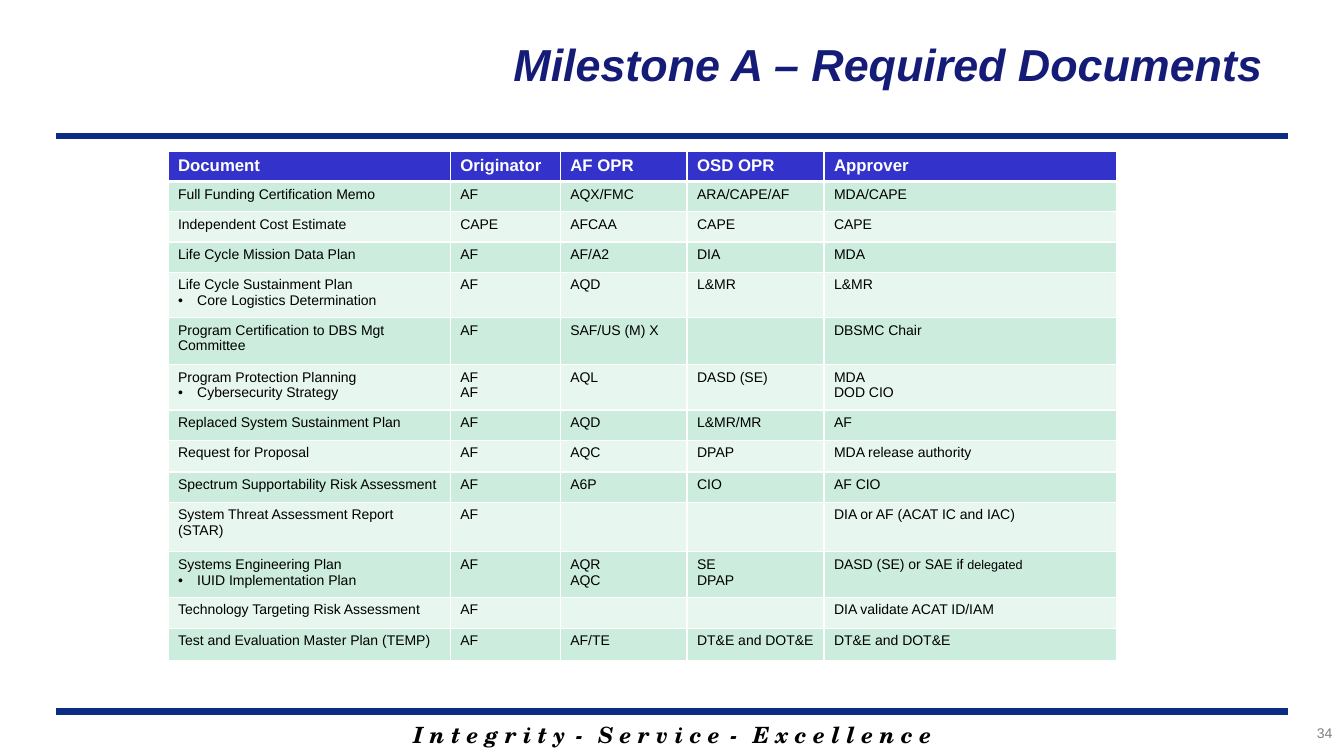
from dataclasses import dataclass

from lxml.etree import SubElement
from pptx import Presentation
from pptx.dml.color import RGBColor
from pptx.enum.shapes import MSO_CONNECTOR as Connector
from pptx.enum.text import MSO_ANCHOR as Anchor, PP_ALIGN as Align
from pptx.oxml.ns import qn
from pptx.util import Inches, Pt

SLIDE_WIDTH, SLIDE_HEIGHT = Inches(13.33), Inches(7.5)
GRID_COLUMNS, GRID_ROWS = 160, 90
WHITE, BLACK, RULE_BLUE = "FFFFFF", "000000", "0C2D83"
HEADER_FILL, BAND_FILLS = "3333CC", ("E7F6EF", "CCECDE")
HEADER_SIZE, BODY_SIZE, SMALL_SIZE = 12, 10, 9
BULLET, SMALL_WORD = "• ", "delegated"
BULLET_INDENT = Inches(0.19)
COLUMN_WIDTHS = (33.6, 13.1, 15.1, 16.3, 34.8)


@dataclass
class Style:
    size: float
    color: str
    font: str = "Arial"
    bold: bool = False
    italic: bool = False


@dataclass
class Run:
    text: str
    spacing: int = 0


@dataclass
class TextBox:
    left: float
    top: float
    width: float
    height: float
    runs: tuple[Run, ...]
    style: Style
    align: Align
    anchor: Anchor = Anchor.TOP


@dataclass
class TableRow:
    """Row height in grid rows; a line break in a cell starts a new paragraph."""
    height: float
    cells: tuple[str, str, str, str, str]


WORD_GAP = Run(" - ", 300)
TEXT_BOXES = (
    TextBox(22.7, 85.2, 114.7, 4.4,
            (Run("I n t e g r i t y"), WORD_GAP, Run("S e r v i c e"), WORD_GAP,
             Run("E x c e l l e n c e")),
            Style(16, BLACK, "TeX Gyre Schola", True, True), Align.CENTER),
    TextBox(58.9, 2, 93.7, 11.2, (Run("Milestone A – Required Documents"),),
            Style(32, "151C77", bold=True, italic=True), Align.CENTER, Anchor.MIDDLE),
    TextBox(139.8, 85.7, 20, 4, (Run("34"),), Style(10, "7F7F7F"), Align.RIGHT),
)
RULE_ROWS = (84.7, 16.2)

TABLE_ROWS = (
    TableRow(3, ("Document", "Originator", "AF OPR", "OSD OPR", "Approver")),
    TableRow(3.6, ("Full Funding Certification Memo", "AF", "AQX/FMC", "ARA/CAPE/AF", "MDA/CAPE")),
    TableRow(3.6, ("Independent Cost Estimate", "CAPE", "AFCAA", "CAPE", "CAPE")),
    TableRow(3.6, ("Life Cycle Mission Data Plan", "AF", "AF/A2", "DIA", "MDA")),
    TableRow(5.4, ("Life Cycle Sustainment Plan\n• Core Logistics Determination",
                   "AF", "AQD", "L&MR", "L&MR")),
    TableRow(5.6, ("Program Certification to DBS Mgt Committee",
                   "AF", "SAF/US (M) X", "", "DBSMC Chair")),
    TableRow(5.4, ("Program Protection Planning\n• Cybersecurity Strategy",
                   "AF\nAF", "AQL", "DASD (SE)", "MDA\nDOD CIO")),
    TableRow(3.6, ("Replaced System Sustainment Plan", "AF", "AQD", "L&MR/MR", "AF")),
    TableRow(3.8, ("Request for Proposal", "AF", "AQC", "DPAP", "MDA release authority")),
    TableRow(3.6, ("Spectrum Supportability Risk Assessment", "AF", "A6P", "CIO", "AF CIO")),
    TableRow(5.9, ("System Threat Assessment Report (STAR)",
                   "AF", "", "", "DIA or AF (ACAT IC and IAC)")),
    TableRow(5.4, ("Systems Engineering Plan\n• IUID Implementation Plan",
                   "AF", "AQR\nAQC", "SE\nDPAP", "DASD (SE) or SAE if delegated")),
    TableRow(3.7, ("Technology Targeting Risk Assessment", "AF", "", "", "DIA validate ACAT ID/IAM")),
    TableRow(3.8, ("Test and Evaluation Master Plan (TEMP)",
                   "AF", "AF/TE", "DT&E and DOT&E", "DT&E and DOT&E")),
)


def across(columns: float) -> int:
    return round(SLIDE_WIDTH * columns / GRID_COLUMNS)


def down(rows: float) -> int:
    return round(SLIDE_HEIGHT * rows / GRID_ROWS)


def rgb(color: str) -> RGBColor:
    return RGBColor.from_string(color)


def add_run(paragraph, run: Run, style: Style) -> None:
    text_run = paragraph.add_run()
    text_run.text = run.text
    font = text_run.font
    font.name, font.size = style.font, Pt(style.size)
    font.bold, font.italic = style.bold, style.italic
    font.color.rgb = rgb(style.color)
    if run.spacing:
        text_run._r.get_or_add_rPr().set("spc", str(run.spacing))


def add_text_box(slide, box: TextBox) -> None:
    shape = slide.shapes.add_textbox(across(box.left), down(box.top),
                                     across(box.width), down(box.height))
    frame = shape.text_frame
    frame.word_wrap = True
    frame.vertical_anchor = box.anchor
    paragraph = frame.paragraphs[0]
    paragraph.alignment = box.align
    for run in box.runs:
        add_run(paragraph, run, box.style)


def add_rule(slide, row: float) -> None:
    line = slide.shapes.add_connector(Connector.STRAIGHT, across(6.7), down(row),
                                      across(153.3), down(row))
    line.line.color.rgb = rgb(RULE_BLUE)
    line.line.width = Pt(4.5)
    SubElement(line._element.spPr, qn("a:effectLst"))


def add_borders(cell, bottom_width: float) -> None:
    properties = cell._tc.get_or_add_tcPr()
    for side, width in (("L", 1), ("R", 1), ("T", 1), ("B", bottom_width)):
        border = SubElement(properties, qn(f"a:ln{side}"), w=str(Pt(width)))
        fill = SubElement(border, qn("a:solidFill"))
        SubElement(fill, qn("a:srgbClr"), val=WHITE)


def add_bullet(paragraph) -> None:
    properties = paragraph._p.get_or_add_pPr()
    properties.set("marL", str(BULLET_INDENT))
    properties.set("indent", str(-BULLET_INDENT))
    SubElement(properties, qn("a:buFont"), typeface="Arial")
    SubElement(properties, qn("a:buChar"), char=BULLET.strip())


def fill_cell(cell, text: str, is_header: bool, fill: str) -> None:
    add_borders(cell, 3 if is_header else 1)
    cell.fill.solid()
    cell.fill.fore_color.rgb = rgb(fill)
    style = Style(HEADER_SIZE, WHITE, bold=True) if is_header else Style(BODY_SIZE, BLACK)
    frame = cell.text_frame
    for index, line in enumerate(text.split("\n")):
        paragraph = frame.add_paragraph() if index else frame.paragraphs[0]
        if line.startswith(BULLET):
            add_bullet(paragraph)
        before, small, _ = line.removeprefix(BULLET).partition(SMALL_WORD)
        if before:
            add_run(paragraph, Run(before), style)
        if small:
            add_run(paragraph, Run(small), Style(SMALL_SIZE, BLACK))
        if not line:
            SubElement(paragraph._p, qn("a:endParaRPr"), sz=str(BODY_SIZE * 100))


def add_document_table(slide) -> None:
    total_height = sum(row.height for row in TABLE_ROWS)
    frame = slide.shapes.add_table(len(TABLE_ROWS), len(COLUMN_WIDTHS), across(20), down(18),
                                   across(sum(COLUMN_WIDTHS)), down(total_height))
    table = frame.table
    table.first_row = table.horz_banding = False
    for column, width in zip(table.columns, COLUMN_WIDTHS):
        column.width = across(width)
    for index, row in enumerate(TABLE_ROWS):
        table.rows[index].height = down(row.height)
        fill = BAND_FILLS[index % 2] if index else HEADER_FILL
        for cell, text in zip(table.rows[index].cells, row.cells):
            fill_cell(cell, text, index == 0, fill)


def main() -> None:
    presentation = Presentation()
    presentation.slide_width, presentation.slide_height = SLIDE_WIDTH, SLIDE_HEIGHT
    slide = presentation.slides.add_slide(presentation.slide_layouts[6])
    for row in RULE_ROWS:
        add_rule(slide, row)
    for box in TEXT_BOXES:
        add_text_box(slide, box)
    add_document_table(slide)
    presentation.save("out.pptx")


if __name__ == "__main__":
    main()
